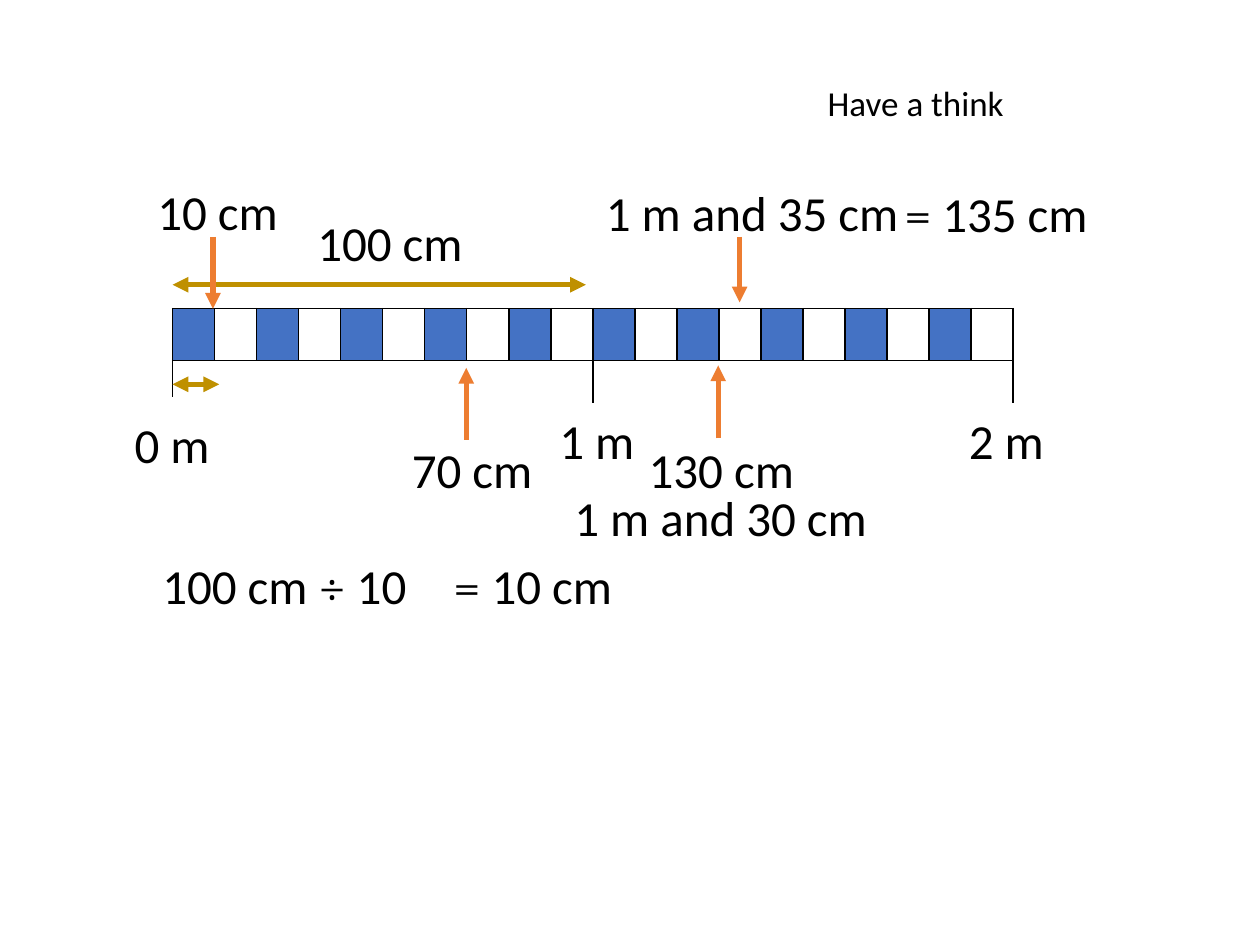
from lxml import etree
from pptx import Presentation
from pptx.dml.color import RGBColor
from pptx.enum.shapes import MSO_CONNECTOR
from pptx.enum.text import MSO_AUTO_SIZE
from pptx.oxml.ns import qn
from pptx.util import Inches, Pt

STRAIGHT = MSO_CONNECTOR.STRAIGHT
GROW = MSO_AUTO_SIZE.SHAPE_TO_FIT_TEXT
BODY_FONT = "Calibri"
SYMBOL_FONT = "Cambria"
COLORS = {
    "black": "000000",
    "white": "FFFFFF",
    "blue": "4472C4",
    "gold": "BF9000",
    "orange": "ED7D31",
}


class SlideBuilder:
    def __init__(self, slide):
        self.slide = slide

    def color(self, name):
        return RGBColor.from_string(COLORS[name])

    def line(self, start, end, color="black", width=1, arrows=()):
        connector = self.slide.shapes.add_connector(
            STRAIGHT, *(Inches(value) for value in start + end))
        connector.line.color.rgb = self.color(color)
        connector.line.width = Pt(width)
        line_element = connector.line._get_or_add_ln()
        for arrow in arrows:
            etree.SubElement(line_element, qn(f"a:{arrow}"), type="triangle")
        etree.SubElement(connector._element.spPr, qn("a:effectLst"))

    def pointer(self, start, end):
        self.line(start, end, "orange", 3, ["tailEnd"])

    def span(self, left, right, top):
        self.line((left, top), (right, top), "gold", 3, ["headEnd", "tailEnd"])

    def text(self, left, top, width, *runs, height=0.57, size=28, wrap=False):
        shape = self.slide.shapes.add_textbox(
            Inches(left), Inches(top), Inches(width), Inches(height))
        frame = shape.text_frame
        frame.word_wrap = wrap
        frame.auto_size = GROW
        paragraph = frame.paragraphs[0]
        for content in runs:
            run = paragraph.add_run()
            run.text = content
            symbol = content.strip() in ("÷", "=")
            run.font.name = SYMBOL_FONT if symbol else BODY_FONT
            run.font.size = Pt(size)
            run.font.color.rgb = self.color("black")

    def border(self, cell):
        properties = cell._tc.get_or_add_tcPr()
        for index, side in enumerate(("lnL", "lnR", "lnT", "lnB")):
            edge = etree.Element(qn(f"a:{side}"), w=str(Pt(1)))
            fill = etree.SubElement(edge, qn("a:solidFill"))
            etree.SubElement(fill, qn("a:srgbClr"), val=COLORS["black"])
            properties.insert(index, edge)

    def ruler(self, left, top, width, height, count):
        table = self.slide.shapes.add_table(
            1, count, Inches(left), Inches(top), Inches(width), Inches(height)).table
        table.first_row = False
        table.horz_banding = False
        for index, cell in enumerate(table.iter_cells()):
            table.columns[index].width = Inches(width / count)
            cell.fill.solid()
            cell.fill.fore_color.rgb = self.color("white" if index % 2 else "blue")
            self.border(cell)


def main():
    presentation = Presentation()
    presentation.slide_width = Inches(10)
    presentation.slide_height = Inches(7.5)
    builder = SlideBuilder(presentation.slides.add_slide(presentation.slide_layouts[6]))

    ruler_left, ruler_top, ruler_width = 1.37, 2.45, 6.67
    builder.ruler(ruler_left, ruler_top, ruler_width, 0.41, 20)

    metre_marks = [
        ("0 m", 2.77, 0.97, 3.24),
        ("1 m", 2.82, 4.34, 3.21),
        ("2 m", 2.82, 7.59, 3.21),
    ]
    for metre, (label, tick_top, label_left, label_top) in enumerate(metre_marks):
        tick_left = ruler_left + metre * ruler_width / 2
        builder.line((tick_left, tick_top), (tick_left, tick_top + 0.38))
        builder.text(label_left, label_top, 0.81, label)

    builder.span(ruler_left, 4.65, 2.26)
    builder.text(1.15, 1.39, 1.17, "10 cm")
    builder.span(ruler_left, 1.74, 3.05)
    builder.text(2.42, 1.64, 1.37, "100 cm")

    builder.text(1.19, 4.36, 2.24, "100 cm ", "÷", " 10")
    builder.text(3.5, 4.36, 1.55, "=", " 10 cm")

    builder.pointer((3.7, 3.49), (3.7, 2.92))
    builder.text(3.17, 3.44, 1.17, "70 cm")

    builder.pointer((5.7, 3.48), (5.7, 2.9))
    builder.text(4.46, 3.82, 2.55, "1 m and 30 cm")
    builder.text(5.05, 3.44, 1.37, "130 cm")

    builder.pointer((5.87, 1.88), (5.87, 2.4))
    builder.text(4.71, 1.4, 2.55, "1 m and 35 cm")
    builder.text(7.08, 1.41, 1.75, "= ", "135 cm")

    builder.pointer((1.69, 1.88), (1.69, ruler_top))
    builder.text(6.47, 0.6, 1.65, "Have a think", height=0.44, size=20, wrap=True)

    presentation.save("out.pptx")


if __name__ == "__main__":
    main()
